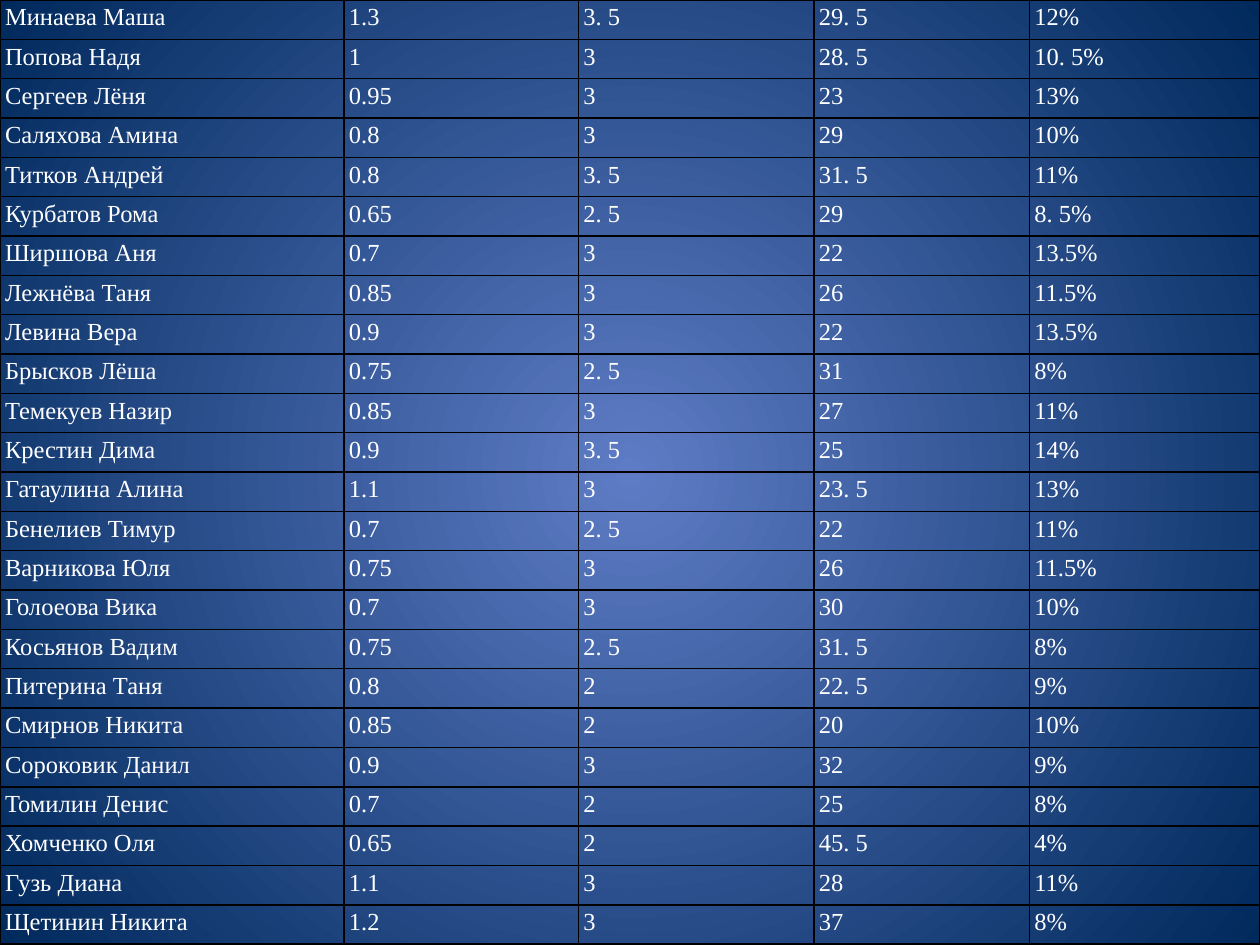
import pptx
import pptx.util
import pptx.dml.color
import pptx.oxml
import pptx.oxml.ns
import lxml.etree

ROWS = """Минаева Маша|1.3|3. 5|29. 5|12%
Попова Надя|1|3|28. 5|10. 5%
Сергеев Лёня|0.95|3|23|13%
Саляхова Амина|0.8|3|29|10%
Титков Андрей|0.8|3. 5|31. 5|11%
Курбатов Рома|0.65|2. 5|29|8. 5%
Ширшова Аня|0.7|3|22|13.5%
Лежнёва Таня|0.85|3|26|11.5%
Левина Вера|0.9|3|22|13.5%
Брысков Лёша|0.75|2. 5|31|8%
Темекуев Назир|0.85|3|27|11%
Крестин Дима|0.9|3. 5|25|14%
Гатаулина Алина|1.1|3|23. 5|13%
Бенелиев Тимур|0.7|2. 5|22|11%
Варникова Юля|0.75|3|26|11.5%
Голоеова Вика|0.7|3|30|10%
Косьянов Вадим|0.75|2. 5|31. 5|8%
Питерина Таня|0.8|2|22. 5|9%
Смирнов Никита|0.85|2|20|10%
Сороковик Данил|0.9|3|32|9%
Томилин Денис|0.7|2|25|8%
Хомченко Оля|0.65|2|45. 5|4%
Гузь Диана|1.1|3|28|11%
Щетинин Никита|1.2|3|37|8%"""
rows = [line.split("|") for line in ROWS.splitlines()]
widths = [2.73, 1.86, 1.87, 1.71, 1.83]
qn = pptx.oxml.ns.qn


def color(text):
    return pptx.dml.color.RGBColor.from_string(text)


def border(cell, side):
    # Cell lines must stand before the fill
    props = cell._tc.get_or_add_tcPr()
    line = lxml.etree.Element(qn("a:" + side), w=str(pptx.util.Pt(1)))
    fill = lxml.etree.SubElement(line, qn("a:solidFill"))
    lxml.etree.SubElement(fill, qn("a:srgbClr"), val="000000")
    props.insert(len(props) - 1, line)


deck = pptx.Presentation()
deck.slide_width = pptx.util.Inches(10)
deck.slide_height = pptx.util.Inches(7.5)
slide = deck.slides.add_slide(deck.slide_layouts[6])

# Round background gradient, light in the middle
back = slide.background.fill
back.gradient()
for stop, tone in zip(back.gradient_stops, ["5E7CC5", "00295C"]):
    stop.color.rgb = color(tone)
lin = next(slide.element.iter(qn("a:lin")))
grad = lin.getparent()
grad.remove(lin)
round_ = lxml.etree.SubElement(grad, qn("a:path"), path="circle")
lxml.etree.SubElement(round_, qn("a:fillToRect"),
                      l="50000", t="50000", r="50000", b="50000")

# Table over the whole slide
table = slide.shapes.add_table(len(rows), len(widths), 0, 0,
                               deck.slide_width, deck.slide_height).table
table.first_row = False
table.horz_banding = False
for col, width in zip(table.columns, widths):
    col.width = pptx.util.Inches(width)

# Cells
for r, row in enumerate(rows):
    for c, text in enumerate(row):
        cell = table.cell(r, c)
        cell.text = text
        cell.margin_left = cell.margin_right = pptx.util.Inches(0.04)
        cell.margin_top = cell.margin_bottom = 0
        cell.fill.background()
        for side in ["lnL", "lnR", "lnT", "lnB"]:
            border(cell, side)
        para = cell.text_frame.paragraphs[0]
        para.line_spacing = 1.15
        para.font.name = "Times New Roman"
        para.font.size = pptx.util.Pt(14)
        para.font.color.rgb = color("FFFFFF")

deck.save("out.pptx")
